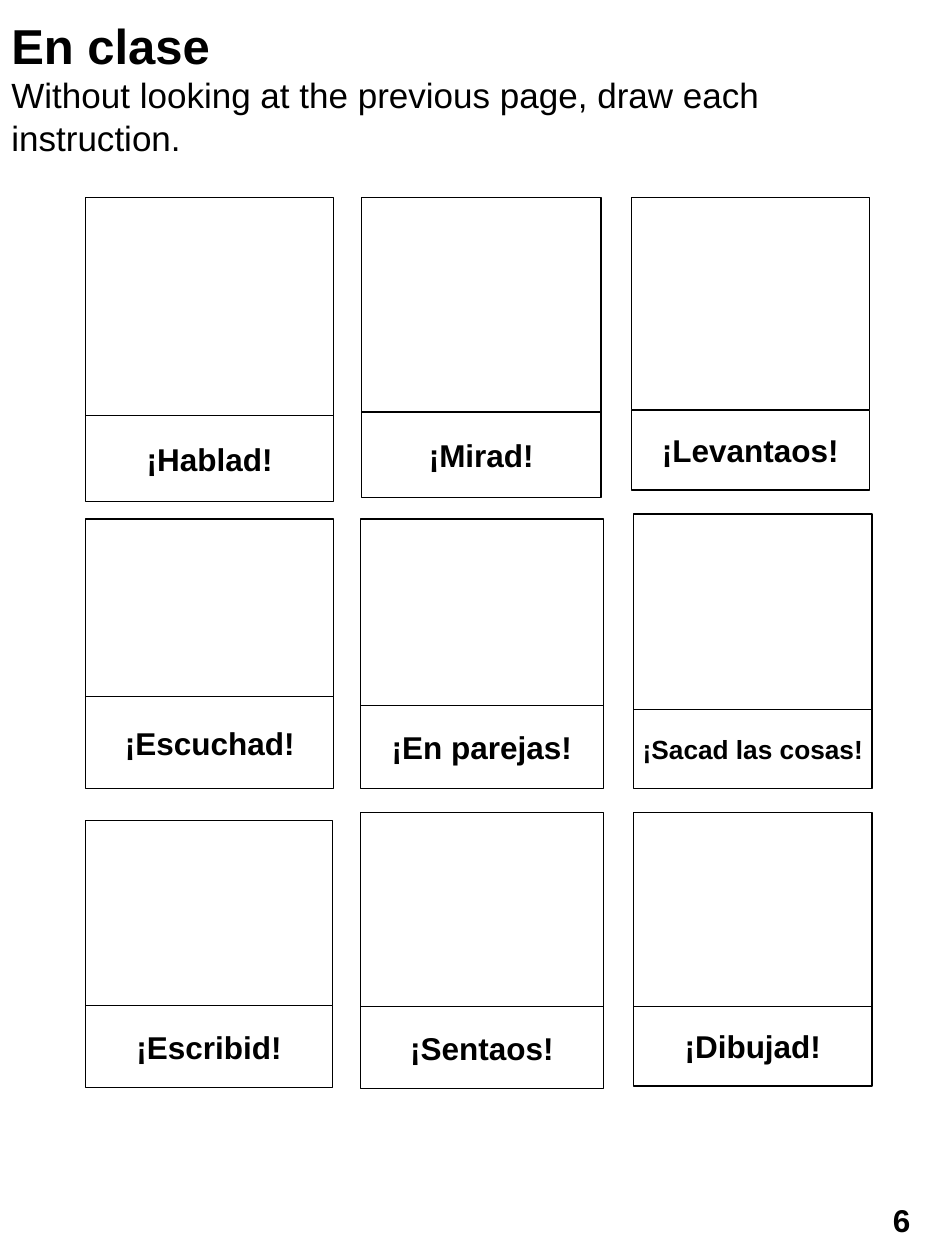
from pptx import Presentation
from pptx.dml.color import RGBColor
from pptx.enum.shapes import MSO_SHAPE
from pptx.enum.text import MSO_ANCHOR, MSO_AUTO_SIZE, PP_ALIGN
from pptx.util import Inches, Pt

RECT, ROUND = MSO_SHAPE.RECTANGLE, MSO_SHAPE.ROUNDED_RECTANGLE
TOP, MIDDLE = MSO_ANCHOR.TOP, MSO_ANCHOR.MIDDLE
LEFT, CENTER = PP_ALIGN.LEFT, PP_ALIGN.CENTER
FIXED = MSO_AUTO_SIZE.NONE
COLORS = {"ink": "000000", "paper": "FFFFFF"}
FONT = "Arial"

# Each card: label, left, width, box top, box height, label top, label height, text size
CARDS = [
    ("¡Hablad!", 0.68, 1.97, 1.57, 1.81, 3.30, 0.68, 18),
    ("¡Mirad!", 2.87, 1.90, 1.57, 1.81, 3.27, 0.68, 18),
    ("¡Levantaos!", 5.01, 1.89, 1.57, 1.68, 3.26, 0.63, 18),
    ("¡Escuchad!", 0.68, 1.97, 4.12, 1.94, 5.53, 0.73, 18),
    ("¡En parejas!", 2.86, 1.93, 4.12, 1.76, 5.60, 0.66, 18),
    ("¡Sacad las cosas!", 5.03, 1.89, 4.08, 1.68, 5.63, 0.63, 15),
    ("¡Escribid!", 0.68, 1.96, 6.51, 1.72, 7.98, 0.65, 18),
    ("¡Sentaos!", 2.86, 1.93, 6.45, 1.72, 7.99, 0.65, 18),
    ("¡Dibujad!", 5.03, 1.89, 6.45, 1.68, 7.99, 0.63, 18),
]


def color(name):
    """Return the named colour."""
    return RGBColor.from_string(COLORS[name])


def write(para, text, size=18, bold=True, align=CENTER, after=0):
    """Add a formatted run to a paragraph."""
    para.alignment = align
    para.space_after = Pt(after)
    run = para.add_run()
    run.text = text
    font = run.font
    font.name, font.size, font.bold = FONT, Pt(size), bold
    font.color.rgb = color("ink")


def fit(frame, inset, anchor=MIDDLE):
    """Set the wrap, anchor and margins of a text frame."""
    frame.word_wrap = True
    frame.auto_size = FIXED
    frame.vertical_anchor = anchor
    frame.margin_left = frame.margin_right = Inches(inset)
    frame.margin_top = frame.margin_bottom = Inches(inset / 2)


def add_box(slide, left, top, width, height):
    """Draw a white rectangle with a thin black outline."""
    box = slide.shapes.add_shape(
        RECT, Inches(left), Inches(top), Inches(width), Inches(height))
    box.shadow.inherit = False
    box.fill.solid()
    box.fill.fore_color.rgb = color("paper")
    box.line.color.rgb = color("ink")
    box.line.width = Pt(0.75)
    return box


def add_label(slide, text, size, *place):
    """Draw a box that holds a centred label."""
    frame = add_box(slide, *place).text_frame
    fit(frame, 0)
    write(frame.paragraphs[0], text, size=size, after=7.5)


def add_title(slide, head, task):
    """Write the heading and the task in the title placeholder."""
    title = slide.shapes.title
    title.left, title.top = Inches(-0.01), Inches(0.07)
    title.width, title.height = Inches(7.42), Inches(1.25)
    frame = title.text_frame
    fit(frame, 0.1, anchor=TOP)
    para = frame.paragraphs[0]
    write(para, head, size=28, align=LEFT)
    para.add_line_break()
    write(para, task, size=20, bold=False, align=LEFT)


def add_number(slide, text):
    """Write the page number in the lower right corner."""
    tab = slide.shapes.add_shape(
        ROUND, Inches(6.88), Inches(9.45), Inches(0.55), Inches(0.47))
    tab.shadow.inherit = False
    tab.fill.background()
    tab.line.fill.background()
    fit(tab.text_frame, 0.1)
    write(tab.text_frame.paragraphs[0], text)


def main():
    """Build the worksheet and save it."""
    deck = Presentation()
    deck.slide_width, deck.slide_height = Inches(7.5), Inches(10)
    slide = deck.slides.add_slide(deck.slide_layouts[5])
    add_title(slide, "En clase",
              "Without looking at the previous page, draw each instruction.")
    for _, left, width, top, height, *_ in CARDS:
        add_box(slide, left, top, width, height)
    for text, left, width, _, _, top, height, size in CARDS:
        add_label(slide, text, size, left, top, width, height)
    add_number(slide, "6")
    deck.save("out.pptx")


if __name__ == "__main__":
    main()
